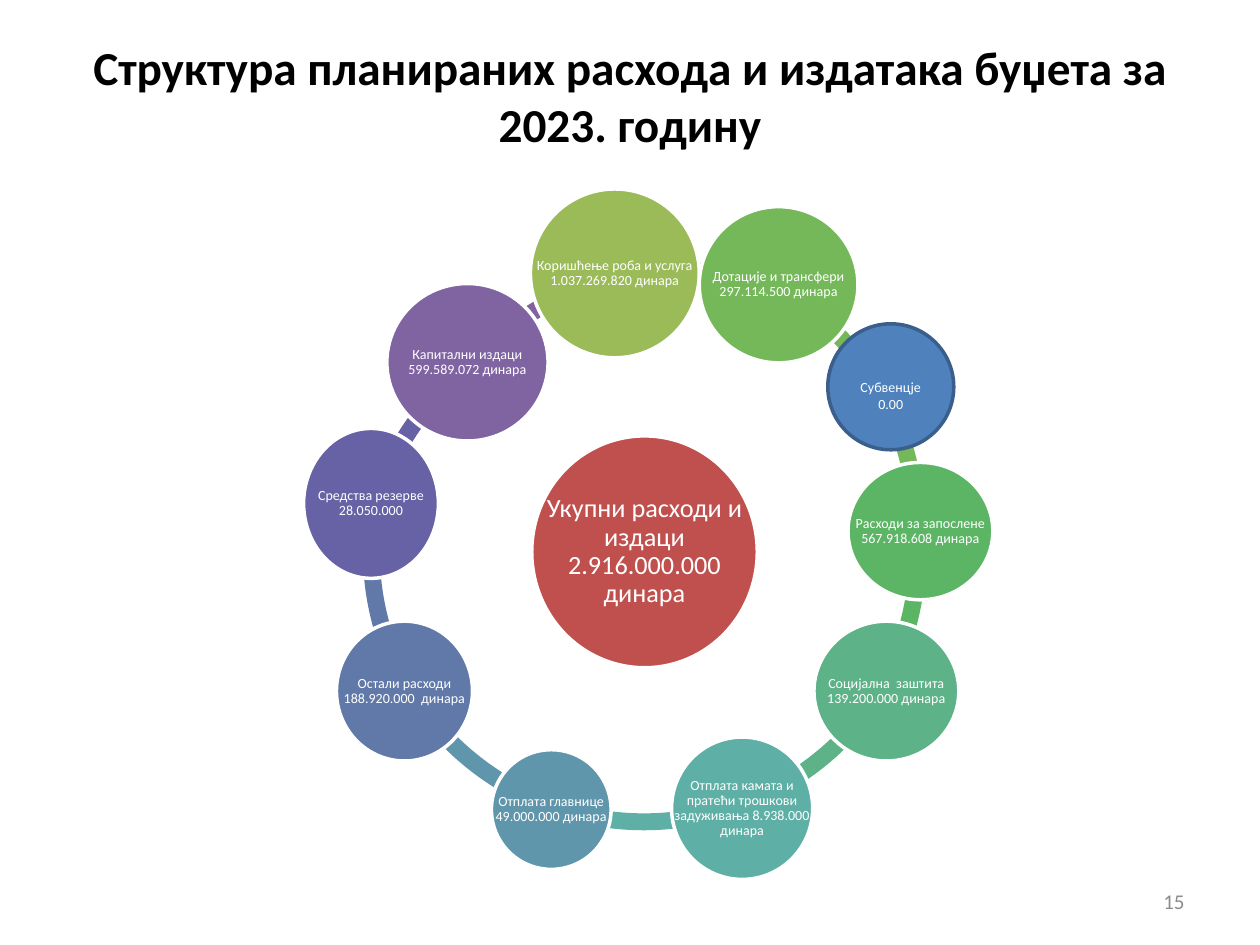
from dataclasses import dataclass

from pptx import Presentation
from pptx.dml.color import RGBColor
from pptx.enum.shapes import MSO_SHAPE
from pptx.enum.text import MSO_ANCHOR, PP_ALIGN
from pptx.util import Inches, Pt


@dataclass(frozen=True)
class Theme:
    """Colours and type sizes of the slide."""
    font: str = "Calibri"
    ink: str = "000000"
    white: str = "FFFFFF"
    muted: str = "8C8C8C"
    hub: str = "C0504D"
    subsidy: str = "4F81BD"
    subsidy_edge: str = "3A5F8C"
    title_size: float = 27
    hub_size: float = 15
    label_size: float = 8
    number_size: float = 12
    edge_width: float = 2


@dataclass(frozen=True)
class Box:
    """A rectangle in inches."""
    left: float
    top: float
    width: float
    height: float

    def inner(self, left, top, width, height):
        """Return a box whose offset is measured from this one."""
        return Box(self.left + left, self.top + top, width, height)

    def lengths(self):
        """Return left, top, width and height as lengths."""
        return [Inches(side) for side in (self.left, self.top, self.width, self.height)]


@dataclass(frozen=True)
class Expense:
    """A budget category with its circle and the ring segment beside it."""
    label: str
    color: str
    circle: tuple
    arc_offset: tuple
    arc_angles: tuple


THEME = Theme()
ARC_SIZE = 4.48
ARC_THICKNESS = 0.03
EXPENSES = [
    Expense("Коришћење роба и услуга 1.037.269.820 динара", "9BBB59",
            (1.81, 0, 1.34, 1.34), (0.75, 0.58), (154.07, 174.6)),
    Expense("Дотације и трансфери 297.114.500 динара", "75B85A",
            (3.15, 0.14, 1.26, 1.24), (0.46, 0.44), (179.52, 0.48)),
    Expense("Расходи за запослене 567.918.608 динара", "5CB565",
            (4.33, 2.17, 1.15, 1.09), (0.47, 0.65), (213.22, 17.7)),
    Expense("Социјална  заштита 139.200.000 динара", "5DB287",
            (4.06, 3.43, 1.15, 1.11), (0.5, 0.6), (18.61, 42.01)),
    Expense("Отплата камата и пратећи трошкови задуживања 8.938.000 динара", "5EAFA6",
            (2.93, 4.35, 1.12, 1.13), (0.47, 0.61), (41.55, 65.74)),
    Expense("Отплата главнице 49.000.000 динара", "6096AC",
            (1.5, 4.45, 0.95, 0.95), (0.47, 0.61), (65.62, 89.53)),
    Expense("Остали расходи 188.920.000  динара", "6179A8",
            (0.27, 3.43, 1.08, 1.11), (0.48, 0.64), (90, 114)),
    Expense("Средства резерве 28.050.000", "6762A5",
            (0.01, 1.9, 1.07, 1.19), (0.42, 0.88), (117.85, 139.28)),
    Expense("Капитални издаци 599.589.072 динара", "8064A2",
            (0.67, 0.75, 1.28, 1.25), (0.74, 0.58), (132.57, 154.28)),
]


def write(frame, lines, size, color, align=PP_ALIGN.CENTER, bold=False, spacing=None):
    """Fill a text frame with one formatted paragraph per line."""
    frame.word_wrap = True
    frame.vertical_anchor = MSO_ANCHOR.MIDDLE
    for index, line in enumerate(lines):
        para = frame.add_paragraph() if index else frame.paragraphs[0]
        para.alignment = align
        if spacing:
            para.line_spacing = spacing
        span = para.add_run()
        span.text = line
        span.font.name = THEME.font
        span.font.size = Pt(size)
        span.font.bold = bold
        span.font.color.rgb = RGBColor.from_string(color)


def set_margins(frame, left, top, right, bottom):
    """Set the four text margins in inches."""
    frame.margin_left, frame.margin_top = Inches(left), Inches(top)
    frame.margin_right, frame.margin_bottom = Inches(right), Inches(bottom)


def add_filled(page, kind, box, fill, edge=None):
    """Add a flat preset shape, outlined if an edge colour is given."""
    shape = page.shapes.add_shape(kind, *box.lengths())
    shape.shadow.inherit = False
    shape.fill.solid()
    shape.fill.fore_color.rgb = RGBColor.from_string(fill)
    if edge:
        shape.line.color.rgb = RGBColor.from_string(edge)
        shape.line.width = Pt(THEME.edge_width)
    else:
        shape.line.fill.background()
    return shape


def add_arc(page, box, expense):
    """Add the ring segment of one category."""
    place = box.inner(*expense.arc_offset, ARC_SIZE, ARC_SIZE)
    arc = add_filled(page, MSO_SHAPE.BLOCK_ARC, place, expense.color)
    for index, value in enumerate((*expense.arc_angles, ARC_THICKNESS)):
        arc.adjustments[index] = value


def add_circle(page, box, label, fill, size, margin):
    """Add a circle with a label that may use its full width."""
    add_filled(page, MSO_SHAPE.OVAL, box, fill, THEME.white)
    frame = page.shapes.add_textbox(*box.lengths()).text_frame
    set_margins(frame, margin, margin, margin, margin)
    write(frame, [label], size, THEME.white, spacing=0.9)


def add_cycle(page, box):
    """Draw the ring, the total in its centre and the category circles."""
    for expense in reversed(EXPENSES):
        add_arc(page, box, expense)
    add_circle(page, box.inner(1.82, 1.96, 1.79, 1.84),
               "Укупни расходи и издаци 2.916.000.000 динара",
               THEME.hub, THEME.hub_size, 0.02)
    for expense in EXPENSES:
        add_circle(page, box.inner(*expense.circle), expense.label,
                   expense.color, THEME.label_size, 0.01)


def add_subsidy(page, box):
    """Add the outlined subsidies circle, its text set below the middle."""
    circle = add_filled(page, MSO_SHAPE.OVAL, box, THEME.subsidy, THEME.subsidy_edge)
    set_margins(circle.text_frame, 0, 0.19, 0, 0.05)
    write(circle.text_frame, ["Субвенцје", "0.00"], THEME.label_size, THEME.white)


def add_title(page, box):
    """Place and fill the title placeholder."""
    title = page.shapes.title
    title.left, title.top, title.width, title.height = box.lengths()
    write(title.text_frame, ["Структура планираних расхода и издатака буџета за 2023. годину"],
          THEME.title_size, THEME.ink, bold=True)


def add_page_number(page, box):
    """Add the page number at the right of its box."""
    frame = page.shapes.add_textbox(*box.lengths()).text_frame
    write(frame, ["15"], THEME.number_size, THEME.muted, PP_ALIGN.RIGHT)


def main():
    """Build the slide and save the deck."""
    deck = Presentation()
    deck.slide_width, deck.slide_height = Inches(10), Inches(7.5)
    page = deck.slides.add_slide(deck.slide_layouts[5])
    cycle = Box(2.4, 1.5, 5.5, 5.5)
    add_title(page, Box(0.5, 0.29, 9, 0.93))
    add_cycle(page, cycle)
    add_page_number(page, Box(7.17, 6.95, 2.33, 0.4))
    add_subsidy(page, cycle.inner(4.17, 1.07, 1, 1))
    deck.save("out.pptx")


if __name__ == "__main__":
    main()
